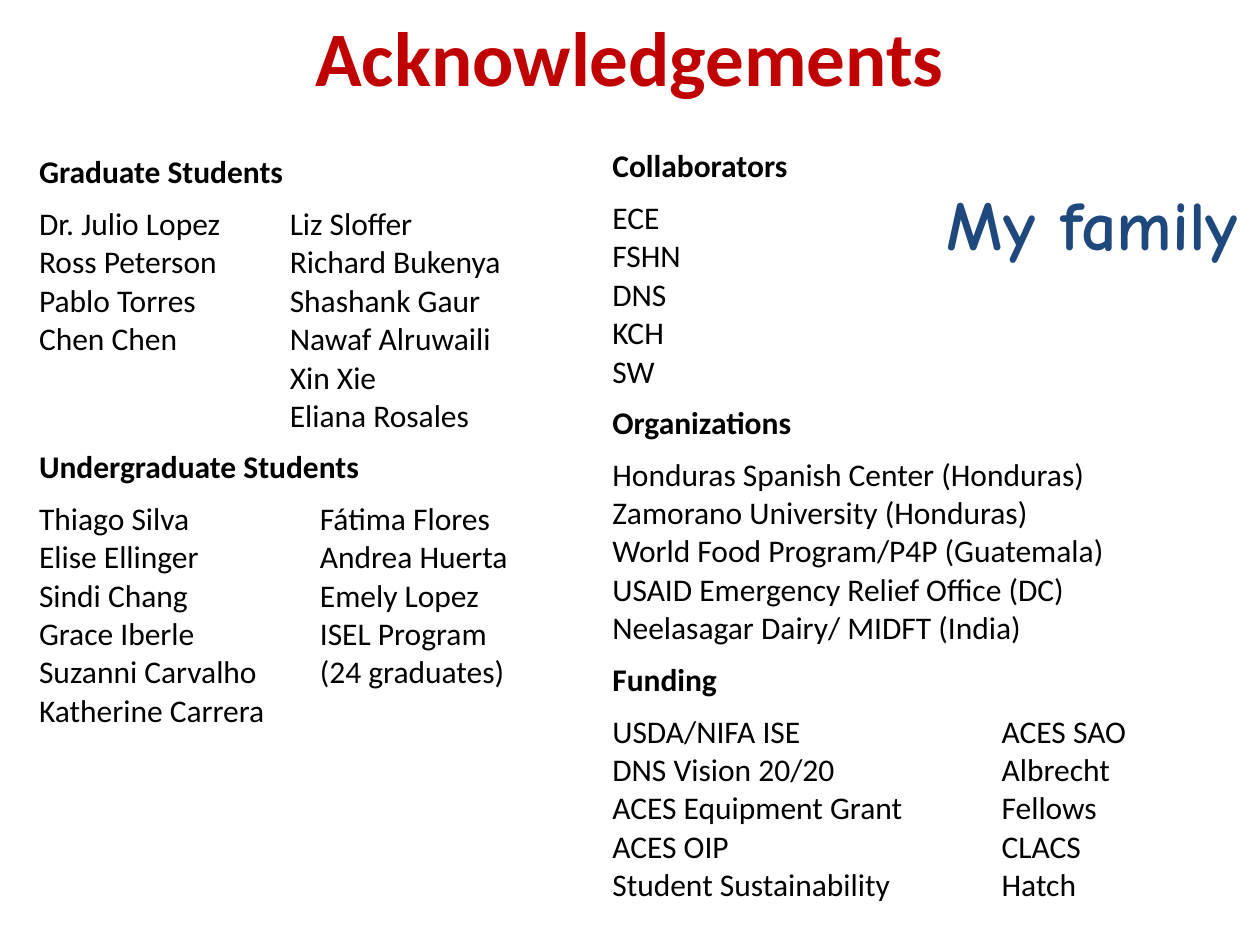
"""Build an acknowledgements slide with two tables of names and a family note."""
import pptx
import pptx.dml.color
import pptx.enum.text
import pptx.oxml.ns
import pptx.util

Inches = pptx.util.Inches
Pt = pptx.util.Pt
PP_ALIGN = pptx.enum.text.PP_ALIGN
MSO_ANCHOR = pptx.enum.text.MSO_ANCHOR
NO_STYLE_NO_GRID = "{2D5ABB26-0587-4C30-8999-92F81FD0307C}"


def rgb(hex_string):
    return pptx.dml.color.RGBColor.from_string(hex_string)


def write_lines(frame, lines, size=18, color="000000", bold=False, font="Calibri", align=PP_ALIGN.LEFT):
    frame.word_wrap = True
    for index, line in enumerate(lines):
        paragraph = frame.add_paragraph() if index else frame.paragraphs[0]
        paragraph.alignment = align
        for part_index, part in enumerate(line.split("\n")):
            if part_index:
                paragraph.add_line_break()
            run = paragraph.add_run()
            run.text = part
            run.font.size = Pt(size)
            run.font.bold = bold
            run.font.name = font
            run.font.color.rgb = rgb(color)


presentation = pptx.Presentation()
presentation.slide_width = Inches(10)
presentation.slide_height = Inches(7.5)
slide = presentation.slides.add_slide(presentation.slide_layouts[6])

title = slide.shapes.add_textbox(Inches(0.5), Inches(0.01), Inches(9), Inches(0.86)).text_frame
title.vertical_anchor = MSO_ANCHOR.MIDDLE
write_lines(title, ["Acknowledgements"], 44, "C00000", True, align=PP_ALIGN.CENTER)

family = slide.shapes.add_textbox(Inches(6.84), Inches(1.38), Inches(3.16), Inches(0.85)).text_frame
write_lines(family, ["My family"], 40, "1F497D", True, "Comic Neue", PP_ALIGN.CENTER)
family.paragraphs[0].space_before = Pt(8)
family.paragraphs[0]._p.get_or_add_pPr().set("marL", str(Inches(0.5)))

students = [
    ("Graduate Students", {
        0: ["Dr. Julio Lopez", "Ross Peterson", "Pablo Torres", "Chen Chen"],
        1: ["Liz Sloffer", "Richard Bukenya", "Shashank Gaur", "Nawaf Alruwaili", "Xin Xie", "Eliana Rosales"],
    }),
    ("Undergraduate Students", {
        0: ["Thiago Silva", "Elise Ellinger", "Sindi Chang", "Grace Iberle", "Suzanni Carvalho", "Katherine Carrera"],
        2: ["Fátima Flores", "Andrea Huerta", "Emely Lopez", "ISEL Program (24 graduates)"],
    }),
]
partners = [
    ("Collaborators", {0: ["ECE", "FSHN\nDNS", "KCH", "SW"]}),
    ("Organizations", {0: [
        "Honduras Spanish Center (Honduras)",
        "Zamorano University (Honduras)",
        "World Food Program/P4P (Guatemala)",
        "USAID Emergency Relief Office (DC)",
        "Neelasagar Dairy/ MIDFT (India)",
    ]}),
    ("Funding", {
        0: ["USDA/NIFA ISE", "DNS Vision 20/20", "ACES Equipment Grant", "ACES OIP\nStudent Sustainability"],
        1: ["ACES SAO", "Albrecht Fellows", "CLACS", "Hatch"],
    }),
]

for left, top, widths, heights, sections in (
    (0.21, 1.17, (1.99, 0.23, 1.75), (0.41, 1.93, 0.41, 2.03), students),
    (4.76, 1.12, (3.09, 1.82), (0.41, 1.63, 0.41, 1.63, 0.41, 1.67), partners),
):
    table = slide.shapes.add_table(
        len(heights), len(widths), Inches(left), Inches(top), Inches(sum(widths)), Inches(sum(heights))
    ).table
    table.first_row = False
    table.horz_banding = False
    table._tbl.tblPr.find(pptx.oxml.ns.qn("a:tableStyleId")).text = NO_STYLE_NO_GRID
    for column, width in zip(table.columns, widths):
        column.width = Inches(width)
    for row, height in zip(table.rows, heights):
        row.height = Inches(height)
    for cell in table.iter_cells():
        cell.fill.background()

    for section_index, (heading, name_columns) in enumerate(sections):
        heading_row = 2 * section_index
        for row_index, columns, bold in (
            (heading_row, {0: [heading]}, True),
            (heading_row + 1, name_columns, False),
        ):
            ends = [*list(columns)[1:], len(widths)]
            for (start, lines), end in zip(columns.items(), ends):
                cell = table.cell(row_index, start)
                if end - start > 1:
                    cell.merge(table.cell(row_index, end - 1))
                write_lines(cell.text_frame, lines, bold=bold)
                if heading == "Collaborators" and not bold:
                    cell.vertical_anchor = MSO_ANCHOR.MIDDLE

presentation.save("out.pptx")
